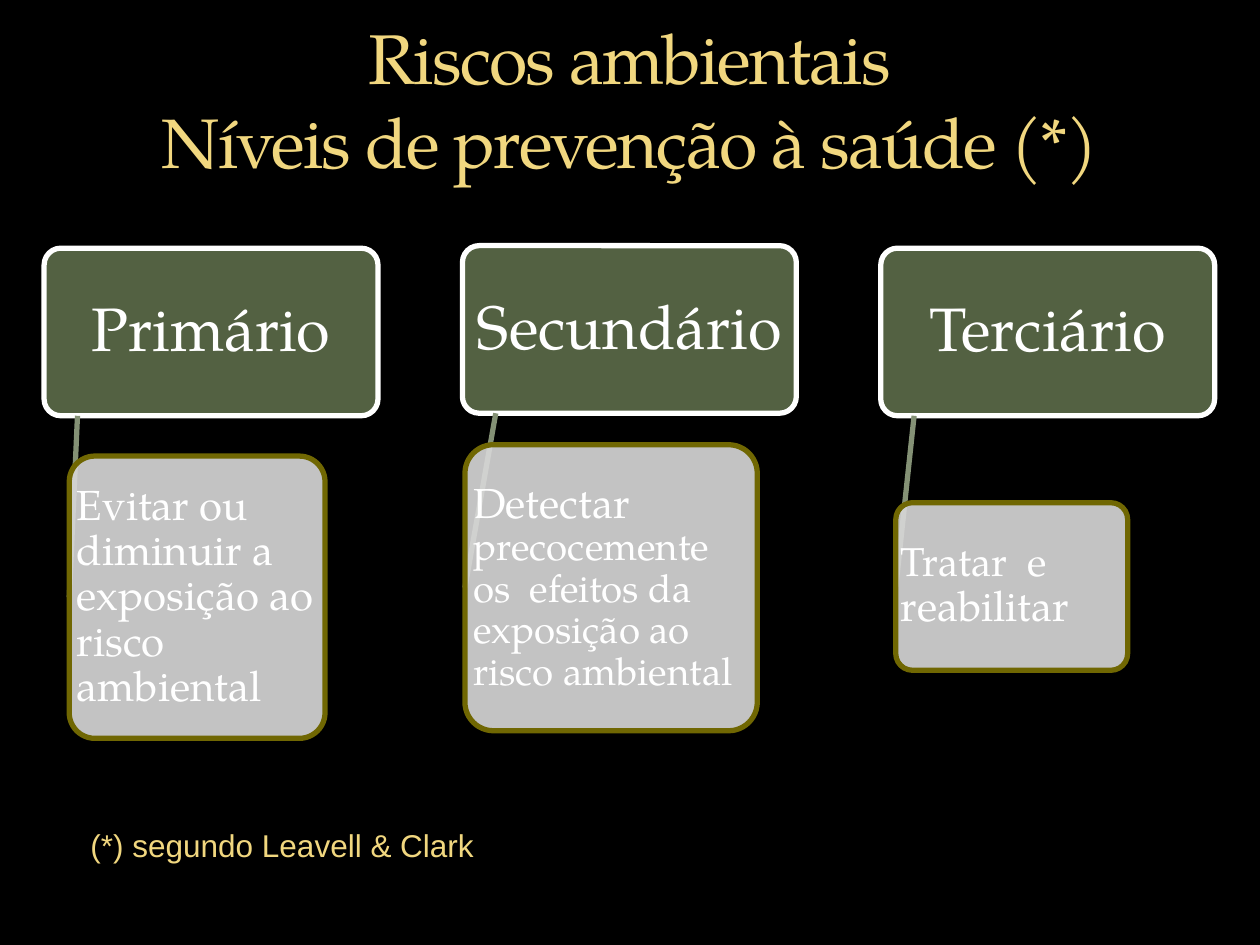
from lxml import etree
from pptx import Presentation
from pptx.dml.color import RGBColor
from pptx.enum.shapes import MSO_CONNECTOR, MSO_SHAPE
from pptx.enum.text import MSO_ANCHOR, PP_ALIGN
from pptx.oxml.ns import qn
from pptx.util import Inches, Pt

ROUNDED = MSO_SHAPE.ROUNDED_RECTANGLE
STRAIGHT = MSO_CONNECTOR.STRAIGHT
MIDDLE, BOTTOM = MSO_ANCHOR.MIDDLE, MSO_ANCHOR.BOTTOM
LEFT, CENTER = PP_ALIGN.LEFT, PP_ALIGN.CENTER
SERIF, SANS = "TeX Gyre Pagella", "Arial"
WHITE, GOLD = "FFFFFF", "F1D77F"


def paint(color_format, hex_color):
    color_format.rgb = RGBColor.from_string(hex_color)


def add_card(position, fill, border, margins, align, runs):
    """Rounded card with its text; runs are (text, size) pairs."""
    card = slide.shapes.add_shape(ROUNDED, *map(Inches, position))
    card.adjustments[0] = 0.1
    card.shadow.inherit = False
    card.fill.solid()
    paint(card.fill.fore_color, fill)
    paint(card.line.color, border)
    card.line.width = Pt(3)
    frame = card.text_frame
    frame.word_wrap = True
    frame.vertical_anchor = MIDDLE
    frame.margin_left = frame.margin_right = Inches(margins[0])
    frame.margin_top = frame.margin_bottom = Inches(margins[1])
    paragraph = frame.paragraphs[0]
    paragraph.alignment = align
    paragraph.line_spacing = 0.9
    for text, size in runs:
        run = paragraph.add_run()
        run.text = text
        run.font.name = SERIF
        run.font.size = Pt(size)
        paint(run.font.color, WHITE)
    return card


prs = Presentation()
prs.slide_width, prs.slide_height = Inches(10), Inches(7.5)
slide = prs.slides.add_slide(prs.slide_layouts[6])
slide.background.fill.solid()
paint(slide.background.fill.fore_color, "000000")

# Prevention levels: name, header top, action position, action text
levels = [
    ("Primário", 1.97, (0.55, 3.62, 2.03, 2.24),
     [("Evitar ou diminuir a exposição ao risco ambiental", 24)]),
    ("Secundário", 1.95, (3.69, 3.53, 2.32, 2.27),
     [("Detectar", 24),
      (" precocemente os  efeitos da exposição ao risco ambiental", 22)]),
    ("Terciário", 1.97, (7.11, 3.99, 1.84, 1.33),
     [("Tratar  e ", 23), ("reabilitar", 24)]),
]
header_width, header_height = 2.65, 1.33
for index, (level, top, action_position, action_runs) in enumerate(levels):
    left = 0.35 + 3.32 * index
    add_card((left, top, header_width, header_height), "536142", WHITE,
             (0.03, 0.01), CENTER, [(level, 35)])

    # Branch from the header to the action, behind the action card
    start_x, start_y = Inches(left + header_width / 10), Inches(top + header_height)
    branch = slide.shapes.add_connector(STRAIGHT, start_x, start_y, start_x, start_y)
    paint(branch.line.color, "849175")
    branch.line.width = Pt(3)
    etree.SubElement(branch._element.spPr, qn("a:effectLst"))

    action = add_card(action_position, "D9D9D9", "706702", (0, 0), LEFT, action_runs)
    fill_color = action._element.spPr.find(qn("a:solidFill"))[0]
    etree.SubElement(fill_color, qn("a:alpha"), val="90000")
    branch.end_connect(action, 1)

# Title
title = slide.shapes.add_textbox(Inches(0.5), Inches(0.17), Inches(9), Inches(1.33))
title.text_frame.word_wrap = True
title.text_frame.vertical_anchor = BOTTOM
heading = title.text_frame.paragraphs[0]
heading.alignment = CENTER
for index, line in enumerate(["Riscos ambientais", "Níveis de prevenção à saúde (*)"]):
    if index:
        heading.add_line_break()
    run = heading.add_run()
    run.text = line
    run.font.name = SERIF
    run.font.size = Pt(40)
    paint(run.font.color, GOLD)
    run.font._element.set("spc", "-100")

# Footnote
footnote = slide.shapes.add_textbox(Inches(0.62), Inches(6.51), Inches(3.27), Inches(0.4))
footnote.text_frame.word_wrap = False
run = footnote.text_frame.paragraphs[0].add_run()
run.text = "(*) segundo Leavell & Clark"
run.font.name = SANS
run.font.size = Pt(18)
paint(run.font.color, GOLD)

prs.save("out.pptx")
